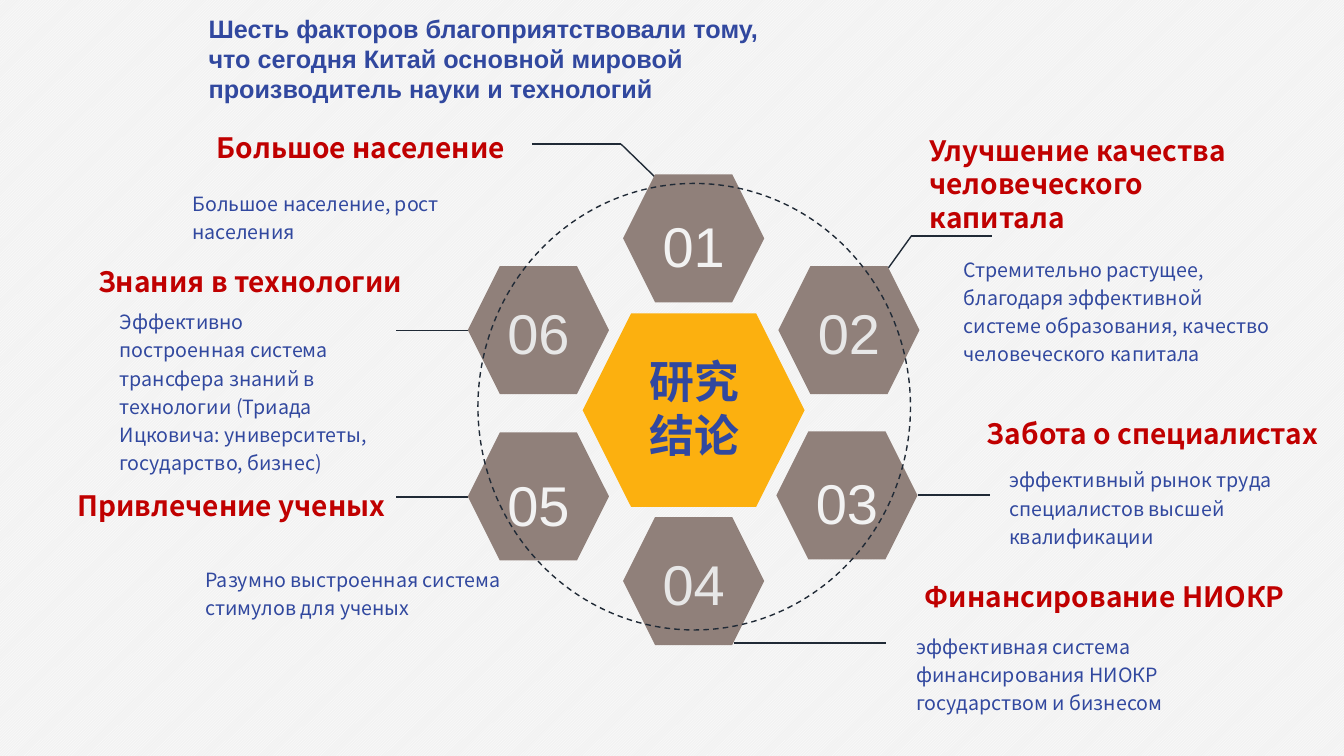
import dataclasses

import pptx
import pptx.dml.color
import pptx.enum.dml
import pptx.enum.shapes
import pptx.enum.text
import pptx.oxml.ns
import pptx.util
from lxml import etree

Inches = pptx.util.Inches
ALIGN = pptx.enum.text.PP_ALIGN
SHAPE = pptx.enum.shapes.MSO_SHAPE


@dataclasses.dataclass(frozen=True)
class Theme:
    blue: str = "31489F"
    red: str = "C00000"
    taupe: str = "90807A"
    amber: str = "FCB00F"
    ink: str = "202A36"
    white: str = "FFFFFF"
    light: str = "F2F2F2"
    silver: str = "E7E7E7"
    latin: str = "Arial"
    sans: str = "Noto Sans CJK SC"
    title_size: int = 18
    heading_size: int = 20
    body_size: int = 14
    number_size: int = 40
    center_size: int = 32


THEME = Theme()


@dataclasses.dataclass(frozen=True)
class Callout:
    heading: str
    heading_box: tuple
    body: str
    body_box: tuple
    align: ALIGN = ALIGN.RIGHT
    wrap: bool = False


CALLOUTS = [
    Callout("Большое население", (1.95, 1.25, 3.16, 0.44),
            "Большое население, рост населения", (-0.14, 0.56, 3.09, 0.64)),
    Callout("Улучшение качества\nчеловеческого\nкапитала", (9.12, 1.27, 3.47, 1.11),
            "Стремительно растущее,\nблагодаря эффективной\n"
            "системе образования, качество человеческого капитала",
            (0.34, 1.19, 3.47, 1.21), ALIGN.LEFT, True),
    Callout("Забота о специалистах", (9.69, 4.08, 3.57, 0.44),
            "эффективный рынок труда специалистов высшей квалификации",
            (0.22, 0.47, 2.96, 0.93), ALIGN.LEFT),
    Callout("Финансирование НИОКР", (8.93, 5.7, 3.91, 0.44),
            "эффективная система финансирования НИОКР государством и бизнесом",
            (0.06, 0.5, 3.43, 0.93)),
    Callout("Привлечение ученых", (0.53, 4.8, 3.39, 0.44),
            "Разумно выстроенная система стимулов для ученых",
            (1.41, 0.74, 3.14, 0.64)),
    Callout("Знания в технологии", (0.79, 2.58, 3.3, 0.44),
            "Эффективно\nпостроенная система трансфера знаний в технологии "
            "(Триада Ицковича: университеты, государство, бизнес)",
            (0.3, 0.4, 2.83, 1.77)),
]

HEXAGON_SIZE = (1.4, 1.27)
HEXAGONS = [(1.54, 0), (3.08, 0.91), (3.06, 2.55), (1.54, 3.4), (0, 2.56), (0, 0.91)]
LEADERS = [
    [(1.85, 0.02), (1.52, -0.3), (0.64, -0.3)],
    [(4.17, 0.93), (4.4, 0.61), (5.2, 0.61)],
    [(4.46, 3.18), (5.18, 3.18)],
    [(2.64, 4.65), (4.15, 4.65)],
    [(0, 3.2), (-0.71, 3.2)],
    [(0, 1.55), (-0.71, 1.55)],
]


def color(value):
    return pptx.dml.color.RGBColor.from_string(value)


def lengths(values):
    return [Inches(value) for value in values]


def add_text(slide, box, text, size, ink, font=THEME.sans, bold=False,
             align=ALIGN.LEFT, spacing=None, wrap=True, inset=(0.1, 0.05)):
    frame = slide.shapes.add_textbox(*lengths(box)).text_frame
    frame.word_wrap = wrap
    frame.margin_left = frame.margin_right = Inches(inset[0])
    frame.margin_top = frame.margin_bottom = Inches(inset[1])
    frame.text = text
    for paragraph in frame.paragraphs:
        paragraph.alignment = align
        paragraph.line_spacing = spacing
        paragraph.font.size = pptx.util.Pt(size)
        paragraph.font.name = font
        paragraph.font.bold = bold
        paragraph.font.color.rgb = color(ink)
        for properties in paragraph._p.iter(pptx.oxml.ns.qn("a:defRPr")):
            east_asian = etree.SubElement(properties, pptx.oxml.ns.qn("a:ea"))
            east_asian.set("typeface", font)


def add_shape(slide, preset, box, fill=None):
    shape = slide.shapes.add_shape(preset, *lengths(box))
    shape.shadow.inherit = False
    if fill:
        shape.fill.solid()
        shape.fill.fore_color.rgb = color(fill)
    else:
        shape.fill.background()
    shape.line.fill.background()
    return shape


def set_line(line):
    line.color.rgb = color(THEME.ink)
    line.width = pptx.util.Pt(1)


def add_leader(slide, left, top, points):
    for start, end in zip(points, points[1:]):
        connector = slide.shapes.add_connector(
            pptx.enum.shapes.MSO_CONNECTOR.STRAIGHT,
            *lengths((left + start[0], top + start[1], left + end[0], top + end[1])))
        set_line(connector.line)
        etree.SubElement(connector._element.spPr, pptx.oxml.ns.qn("a:effectLst"))


def add_wheel(slide, left, top):
    for points in LEADERS:
        add_leader(slide, left, top, points)
    for number, (across, down) in enumerate(HEXAGONS, 1):
        x, y = left + across, top + down
        add_shape(slide, SHAPE.HEXAGON, (x, y, *HEXAGON_SIZE), THEME.taupe)
        odd = number % 2
        offset, height = (0.13, 0.92) if odd else (0.21, 0.85)
        add_text(slide, (x + 0.2, y + offset, 1, height), f"{number:02}",
                 THEME.number_size, THEME.light if odd else THEME.silver, THEME.latin,
                 align=ALIGN.CENTER, spacing=1.2 if odd else None, inset=(0.11, 0.11))
    add_shape(slide, SHAPE.HEXAGON, (left + 1.14, top + 1.38, 2.2, 1.92), THEME.amber)
    add_text(slide, (left + 1.57, top + 1.67, 1.35, 1.33), "研究结论",
             THEME.center_size, THEME.blue, bold=True, align=ALIGN.CENTER,
             inset=(0.11, 0.11))
    ring = add_shape(slide, SHAPE.OVAL, (left + 0.1, top + 0.09, 4.29, 4.43))
    set_line(ring.line)
    ring.line.dash_style = pptx.enum.dml.MSO_LINE.DASH


def add_callout(slide, callout):
    left, top = callout.heading_box[:2]
    across, down, width, height = callout.body_box
    add_text(slide, callout.heading_box, callout.heading, THEME.heading_size, THEME.red,
             bold=True, align=callout.align, wrap=callout.wrap)
    add_text(slide, (left + across, top + down, width, height), callout.body,
             THEME.body_size, THEME.blue, spacing=1.2)


def add_background(slide):
    fill = slide.background.fill
    fill.patterned()
    fill.pattern = pptx.enum.dml.MSO_PATTERN.LIGHT_UPWARD_DIAGONAL
    fill.fore_color.rgb = color(THEME.white)
    fill.back_color.rgb = color(THEME.light)


def main():
    presentation = pptx.Presentation()
    presentation.slide_width = Inches(13.33)
    presentation.slide_height = Inches(7.5)
    slide = presentation.slides.add_slide(presentation.slide_layouts[6])
    add_background(slide)
    add_text(slide, (1.97, 0.08, 5.79, 1.01),
             "Шесть факторов благоприятствовали тому,\n"
             "что сегодня Китай основной мировой\n"
             "производитель науки и технологий",
             THEME.title_size, THEME.blue, THEME.latin, bold=True, wrap=False)
    add_wheel(slide, 4.64, 1.73)
    for callout in CALLOUTS:
        add_callout(slide, callout)
    presentation.save("out.pptx")


if __name__ == "__main__":
    main()
